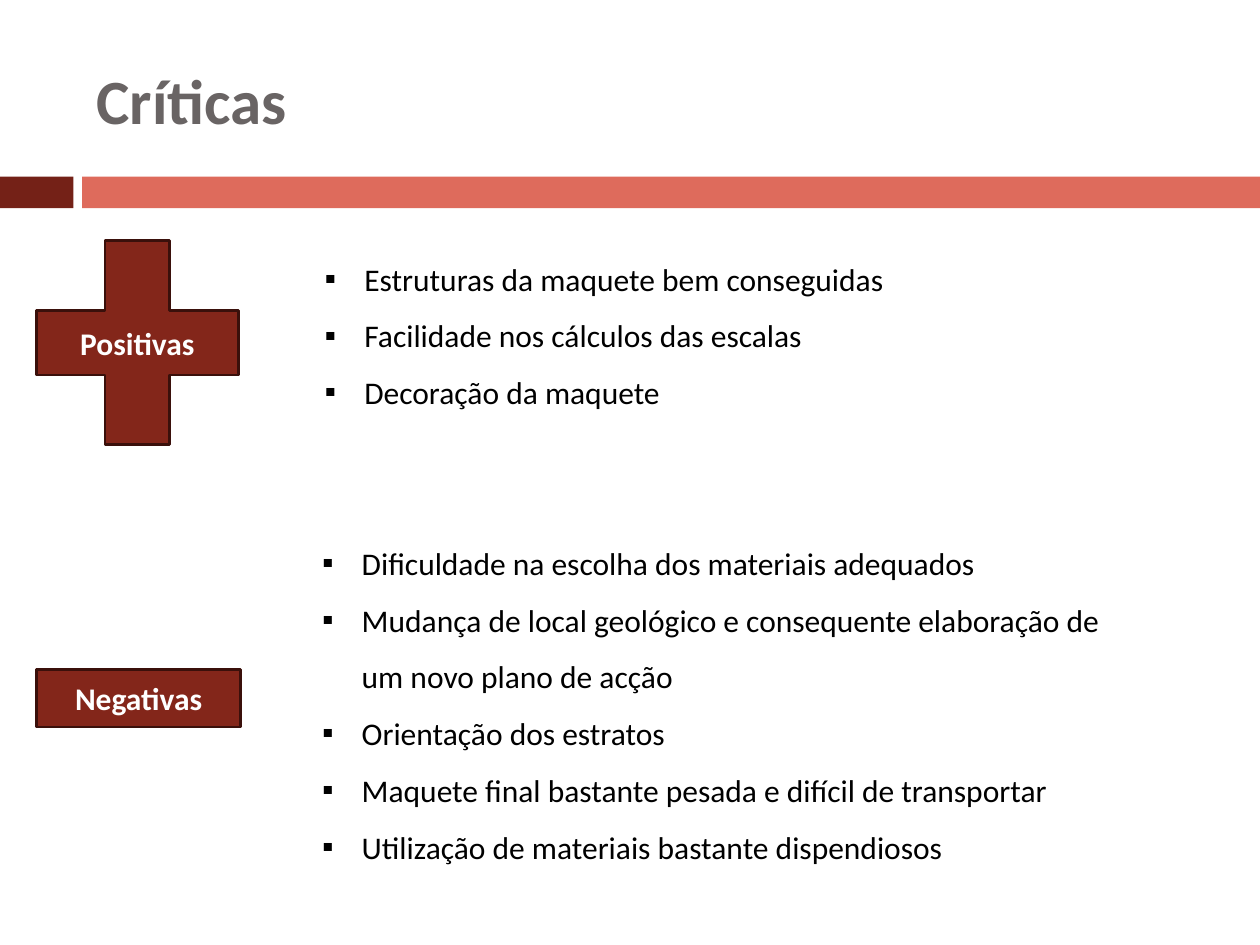
from dataclasses import dataclass
from typing import NamedTuple

import pptx
import pptx.dml.color
import pptx.enum.shapes
import pptx.enum.text
import pptx.oxml.ns
import pptx.util
from lxml import etree

Pt = pptx.util.Pt
SHAPES = pptx.enum.shapes.MSO_SHAPE
ANCHOR = pptx.enum.text.MSO_ANCHOR
ALIGN = pptx.enum.text.PP_ALIGN


@dataclass(frozen=True)
class Theme:
    font: str = "Calibri"
    title_size: float = 36
    text_size: float = 18
    title: str = "696464"
    text: str = "000000"
    label: str = "FFFFFF"
    dark_band: str = "742117"
    light_band: str = "DE6B5C"
    sign: str = "83261A"
    sign_edge: str = "3A100B"
    bullet: str = "▪"
    indent: float = 22.5
    line_spacing: float = 1.5


class Box(NamedTuple):
    left: float
    top: float
    width: float
    height: float

    def inner(self, left, top, width, height):
        """Box whose position is given relative to this one."""
        return Box(self.left + left, self.top + top, width, height)


THEME = Theme()


def rgb(value):
    return pptx.dml.color.RGBColor.from_string(value)


def place(shape, box):
    shape.left, shape.top, shape.width, shape.height = map(Pt, box)


def add_run(paragraph, text, size, color, bold=False):
    run = paragraph.add_run()
    run.text = text
    run.font.name = THEME.font
    run.font.size = Pt(size)
    run.font.bold = bold
    run.font.color.rgb = rgb(color)


def add_filled(slide, preset, box, fill):
    shape = slide.shapes.add_shape(preset, *map(Pt, box))
    shape.shadow.inherit = False
    shape.fill.solid()
    shape.fill.fore_color.rgb = rgb(fill)
    shape.line.fill.background()
    return shape


def add_band(slide, box, tab_width=42, gap=5):
    """Draw the dark tab and the long light bar beside it."""
    bar_left = tab_width + gap
    add_filled(slide, SHAPES.RECTANGLE,
               box.inner(0, 0, tab_width, box.height), THEME.dark_band)
    add_filled(slide, SHAPES.RECTANGLE,
               box.inner(bar_left, 0, box.width - bar_left, box.height),
               THEME.light_band)


def fill_title(title, box, text):
    place(title, box)
    frame = title.text_frame
    frame.auto_size = pptx.enum.text.MSO_AUTO_SIZE.NONE
    frame.vertical_anchor = ANCHOR.MIDDLE
    paragraph = frame.paragraphs[0]
    paragraph.alignment = ALIGN.LEFT
    add_run(paragraph, text, THEME.title_size, THEME.title, bold=True)


def set_bullet(paragraph):
    properties = paragraph._p.get_or_add_pPr()
    properties.set("marL", str(Pt(THEME.indent)))
    properties.set("indent", str(-Pt(THEME.indent)))
    for tag, key, value in (("a:buFont", "typeface", THEME.font),
                            ("a:buChar", "char", THEME.bullet)):
        etree.SubElement(properties, pptx.oxml.ns.qn(tag)).set(key, value)


def fill_list(body, box, points):
    place(body, box)
    frame = body.text_frame
    frame.auto_size = pptx.enum.text.MSO_AUTO_SIZE.NONE
    frame.vertical_anchor = ANCHOR.TOP
    for index, point in enumerate(points):
        paragraph = frame.add_paragraph() if index else frame.paragraphs[0]
        paragraph.line_spacing = THEME.line_spacing
        paragraph.space_before = Pt(0)
        set_bullet(paragraph)
        add_run(paragraph, point, THEME.text_size, THEME.text)


def add_sign(slide, preset, box, label):
    sign = add_filled(slide, preset, box, THEME.sign)
    sign.line.color.rgb = rgb(THEME.sign_edge)
    sign.line.width = Pt(1.5)
    frame = sign.text_frame
    frame.word_wrap = True
    frame.vertical_anchor = ANCHOR.MIDDLE
    paragraph = frame.paragraphs[0]
    paragraph.alignment = ALIGN.CENTER
    add_run(paragraph, label, THEME.text_size, THEME.label, bold=True)


def add_review(slide, body, box, preset, sign_box, label, list_left, points):
    """Place a labelled sign and, to its right, the list of its points."""
    add_sign(slide, preset, box.inner(*sign_box), label)
    fill_list(body, box.inner(list_left, 0, box.width - list_left, box.height),
              points)


def build_reviews_slide(deck):
    slide = deck.slides.add_slide(deck.slide_layouts[3])
    title, positives, negatives = slide.placeholders
    add_band(slide, Box(0, 101, 720, 18))
    fill_title(title, Box(48, 18, 642, 78), "Críticas")
    add_review(slide, positives, Box(0, 134, 705.5, 160),
               SHAPES.MATH_PLUS, (0, -17.5, 157, 158.5), "Positivas", 178.5,
               ["Estruturas da maquete bem conseguidas",
                "Facilidade nos cálculos das escalas",
                "Decoração da maquete"])
    add_review(slide, negatives, Box(0, 296.5, 651, 204),
               SHAPES.MATH_MINUS, (0, 32, 158.5, 141), "Negativas", 177,
               ["Dificuldade na escolha dos materiais adequados",
                "Mudança de local geológico e consequente elaboração de "
                "um novo plano de acção",
                "Orientação dos estratos",
                "Maquete final bastante pesada e difícil de transportar",
                "Utilização de materiais bastante dispendiosos"])


def main():
    deck = pptx.Presentation()
    deck.slide_width, deck.slide_height = Pt(720), Pt(540)
    build_reviews_slide(deck)
    deck.save("out.pptx")


if __name__ == "__main__":
    main()
